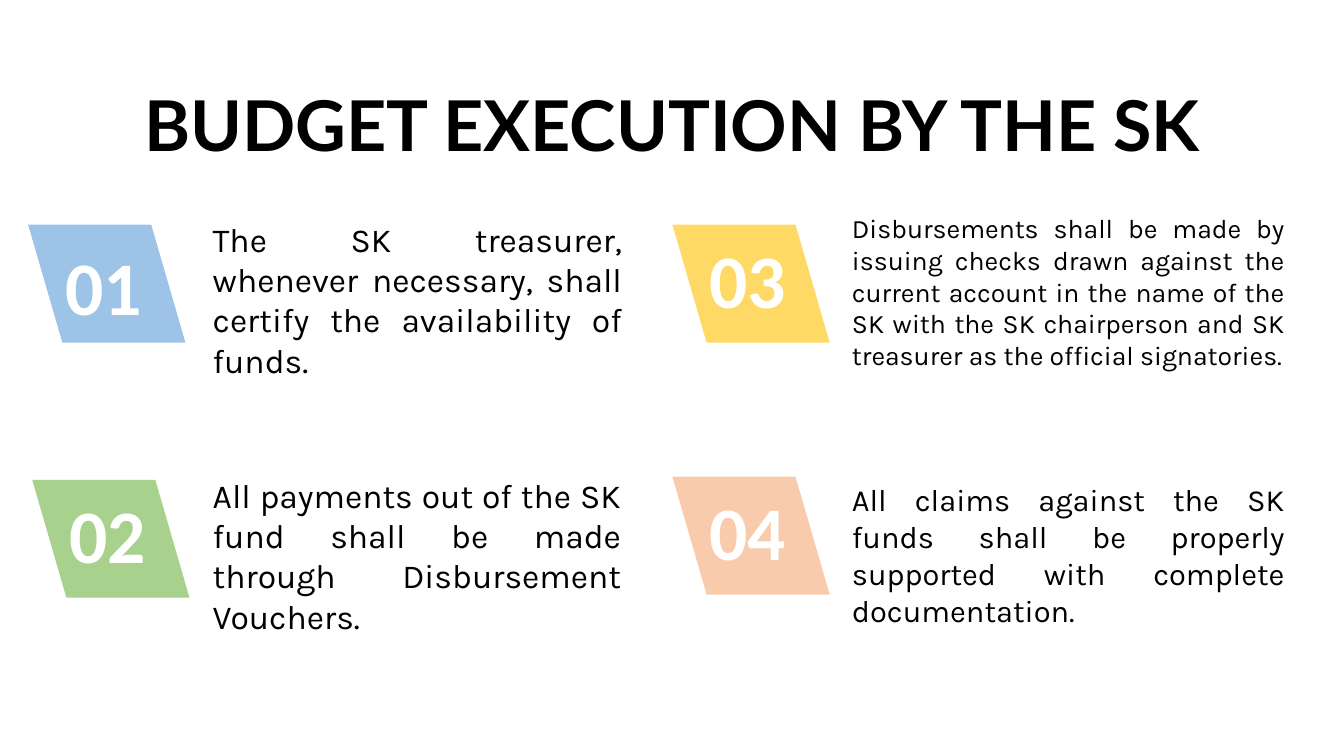
from dataclasses import dataclass

from pptx import Presentation
from pptx import util as u
from pptx.dml.color import RGBColor
from pptx.enum import shapes, text
from pptx.slide import Slide
from pptx.text.text import TextFrame

COLOURS = {
    "blue": "9DC3E6",
    "green": "A9D18E",
    "yellow": "FFD966",
    "peach": "F8CBAD",
    "ink": "000000",
    "white": "FFFFFF",
}
BADGE_WIDTH, BADGE_HEIGHT, BADGE_SLANT = 1.56, 1.17, 0.29


@dataclass(frozen=True)
class Style:
    font: str
    size: float
    colour: str
    bold: bool = False
    align: text.PP_ALIGN = text.PP_ALIGN.LEFT


@dataclass(frozen=True)
class Step:
    number: str
    colour: str
    badge_left: float
    badge_top: float
    text_left: float
    text_top: float
    text_width: float
    text_height: float
    text_size: float
    wording: str
    number_drop: float = 0


STEPS = [
    Step("01", "blue", 0.28, 2.23, 2.11, 2.12, 4.06, 1.31, 24,
         "The SK treasurer, whenever necessary, shall certify the "
         "availability of funds.", number_drop=0.13),
    Step("02", "green", 0.32, 4.76, 2.11, 4.66, 4.05, 1.31, 24,
         "All payments out of the SK fund shall be made through "
         "Disbursement Vouchers."),
    Step("03", "yellow", 6.67, 2.23, 8.45, 2.05, 4.29, 1.38, 19,
         "Disbursements shall be made by issuing checks drawn against the "
         "current account in the name of the SK with the SK chairperson and "
         "SK treasurer as the official signatories."),
    Step("04", "peach", 6.67, 4.73, 8.45, 4.72, 4.29, 1.21, 22,
         "All claims against the SK funds shall be properly supported with "
         "complete documentation."),
]

NUMBER_STYLE = Style("Calibri", 54, "white", bold=True)
TITLE_STYLE = Style("Lato", 50, "ink", bold=True, align=text.PP_ALIGN.CENTER)


def colour(name: str) -> RGBColor:
    return RGBColor.from_string(COLOURS[name])


def set_margins(frame: TextFrame, left: float, top: float,
                right: float, bottom: float) -> None:
    frame.margin_left, frame.margin_top = u.Inches(left), u.Inches(top)
    frame.margin_right, frame.margin_bottom = u.Inches(right), u.Inches(bottom)


def write(frame: TextFrame, wording: str, style: Style) -> None:
    frame.word_wrap = True
    para = frame.paragraphs[0]
    para.alignment = style.align
    span = para.add_run()
    span.text = wording
    span.font.name = style.font
    span.font.size = u.Pt(style.size)
    span.font.bold = style.bold
    span.font.color.rgb = colour(style.colour)


def add_badge(page: Slide, step: Step) -> None:
    """Draw the slanted, left-leaning shape that carries the step number."""
    badge = page.shapes.add_shape(
        shapes.MSO_SHAPE.PARALLELOGRAM,
        u.Inches(step.badge_left), u.Inches(step.badge_top),
        u.Inches(BADGE_WIDTH), u.Inches(BADGE_HEIGHT))
    badge.adjustments[0] = BADGE_SLANT
    badge._element.spPr.xfrm.set("flipH", "1")
    badge.shadow.inherit = False
    badge.fill.solid()
    badge.fill.fore_color.rgb = colour(step.colour)
    badge.line.fill.background()
    frame = badge.text_frame
    frame.vertical_anchor = text.MSO_ANCHOR.MIDDLE
    set_margins(frame, 0.1, step.number_drop, 0.05, 0.1)
    write(frame, step.number, NUMBER_STYLE)


def add_wording(page: Slide, step: Step) -> None:
    box = page.shapes.add_textbox(
        u.Inches(step.text_left), u.Inches(step.text_top),
        u.Inches(step.text_width), u.Inches(step.text_height))
    frame = box.text_frame
    set_margins(frame, 0, 0.05, 0, 0.05)
    write(frame, step.wording,
          Style("Karla", step.text_size, "ink", align=text.PP_ALIGN.JUSTIFY))
    frame.auto_size = text.MSO_AUTO_SIZE.SHAPE_TO_FIT_TEXT


def add_title(page: Slide, wording: str) -> None:
    box = page.shapes.add_textbox(
        u.Inches(0.17), u.Inches(0.55), u.Inches(13), u.Inches(1.36))
    frame = box.text_frame
    frame.vertical_anchor = text.MSO_ANCHOR.MIDDLE
    set_margins(frame, 0.07, 0.04, 0.07, 0.04)
    write(frame, wording, TITLE_STYLE)


def main() -> None:
    deck = Presentation()
    deck.slide_width, deck.slide_height = u.Inches(13.33), u.Inches(7.5)
    page = deck.slides.add_slide(deck.slide_layouts[6])
    add_title(page, "BUDGET EXECUTION BY THE SK")
    for step in STEPS:
        add_badge(page, step)
        add_wording(page, step)
    deck.save("out.pptx")


if __name__ == "__main__":
    main()
